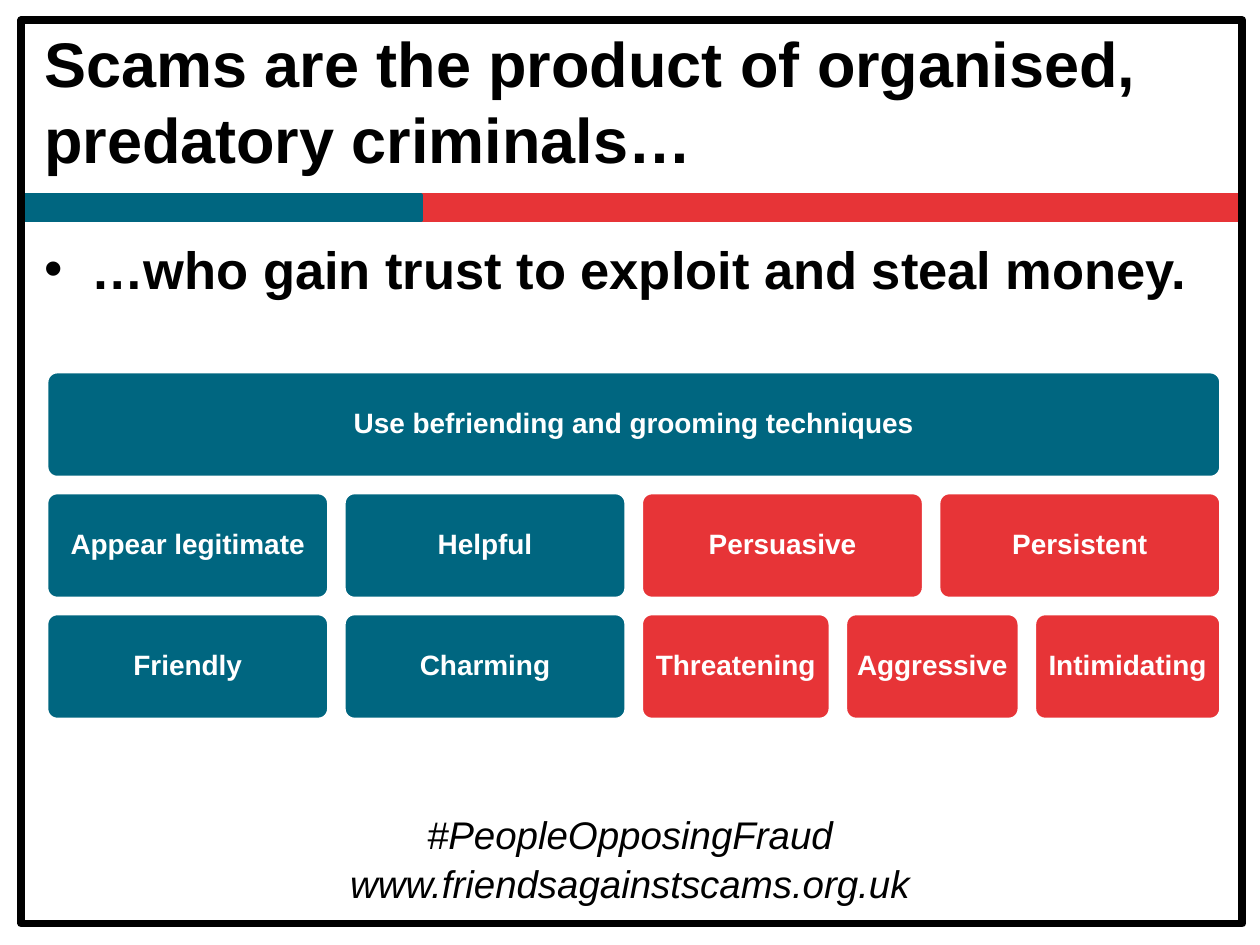
from pptx import Presentation
from pptx.dml.color import RGBColor
from pptx.enum.shapes import MSO_SHAPE
from pptx.enum.text import MSO_ANCHOR, PP_ALIGN
from pptx.util import Inches, Pt

RECTANGLE, ROUNDED = MSO_SHAPE.RECTANGLE, MSO_SHAPE.ROUNDED_RECTANGLE
CENTER, LEFT = PP_ALIGN.CENTER, PP_ALIGN.LEFT
TOP, MIDDLE = MSO_ANCHOR.TOP, MSO_ANCHOR.MIDDLE

THEME = {
    "font": "Arial",
    "teal": RGBColor(0x00, 0x66, 0x80),
    "red": RGBColor(0xE7, 0x34, 0x37),
    "black": RGBColor(0, 0, 0),
    "white": RGBColor(255, 255, 255),
    "title": 36, "body": 30, "footer": 22, "tile": 16,
}

# Content
TITLE = "Scams are the product of organised, predatory criminals…"
BODY = "…who gain trust to exploit and steal money."
FOOTER = [("#PeopleOpposingFraud", 6.39), ("www.friendsagainstscams.org.uk", 6.78)]
BANDS = [("red", 0.42, 9.44), ("teal", 0.17, 3.17)]  # colour, left, width
TILE_ROWS = [  # label, colour, width
    [("Use befriending and grooming techniques", "teal", 9.32)],
    [("Appear legitimate", "teal", 2.24), ("Helpful", "teal", 2.24),
     ("Persuasive", "red", 2.24), ("Persistent", "red", 2.24)],
    [("Friendly", "teal", 2.24), ("Charming", "teal", 2.24),
     ("Threatening", "red", 1.5), ("Aggressive", "red", 1.38),
     ("Intimidating", "red", 1.48)],
]
TILE_LEFT, TILE_TOP, TILE_HEIGHT, TILE_GAP = 0.37, 2.95, 0.84, 0.12


def write(box, text, role, color="black", align=LEFT, anchor=TOP, bold=True):
    frame = box.text_frame
    frame.word_wrap = True
    frame.vertical_anchor = anchor
    frame.text = text
    para = frame.paragraphs[0]
    para.alignment = align
    para.space_before = Pt(0)
    para.font.name = THEME["font"]
    para.font.size = Pt(THEME[role])
    para.font.bold = bold
    para.font.italic = not bold
    para.font.color.rgb = THEME[color]
    return para


def place(box, left, top, width, height):
    box.left, box.top = Inches(left), Inches(top)
    box.width, box.height = Inches(width), Inches(height)


def add_block(slide, kind, area, fill, line, line_width):
    block = slide.shapes.add_shape(kind, *map(Inches, area))
    block.shadow.inherit = False
    if fill:
        block.fill.solid()
        block.fill.fore_color.rgb = THEME[fill]
    else:
        block.fill.background()
    block.line.color.rgb = THEME[line]
    block.line.width = Pt(line_width)
    return block


def add_tile(slide, label, color, area):
    tile = add_block(slide, ROUNDED, area, color, "white", 2)
    tile.adjustments[0] = 0.1
    frame = tile.text_frame
    frame.margin_left = frame.margin_right = Inches(0.04)
    para = write(tile, label, "tile", "white", CENTER, MIDDLE)
    para.line_spacing = 0.9


def main():
    deck = Presentation()
    deck.slide_width, deck.slide_height = Inches(10), Inches(7.5)
    slide = deck.slides.add_slide(deck.slide_layouts[1])

    # Coloured bands and page frame
    for color, left, width in BANDS:
        add_block(slide, RECTANGLE, (left, 1.55, width, 0.2), color, color, 2)
    add_block(slide, RECTANGLE, (0.17, 0.16, 9.69, 7.17), None, "black", 4.5)

    # Title and lead sentence
    title, body = slide.shapes.title, slide.placeholders[1]
    place(title, 0.25, 0.17, 9.42, 1.25)
    write(title, TITLE, "title", anchor=MIDDLE)
    place(body, 0.25, 1.83, 9.42, 0.83)
    properties = body.text_frame.paragraphs[0]._p.get_or_add_pPr()
    properties.set("marL", "0")
    properties.set("indent", "0")
    properties.insert_element_before(
        properties.makeelement(
            "{http://schemas.openxmlformats.org/drawingml/2006/main}buNone", {}),
        "a:tabLst", "a:defRPr", "a:extLst")
    write(body, BODY, "body")

    # Tiles flow from the left edge with an equal gap
    for row, tiles in enumerate(TILE_ROWS):
        left = TILE_LEFT
        top = TILE_TOP + row * (TILE_HEIGHT + TILE_GAP)
        for label, color, width in tiles:
            add_tile(slide, label, color, (left, top, width, TILE_HEIGHT))
            left += width + TILE_GAP

    # Footer lines
    for text, top in FOOTER:
        box = slide.shapes.add_textbox(Inches(0), Inches(top), Inches(10), Inches(0.47))
        write(box, text, "footer", align=CENTER, bold=False)

    deck.save("out.pptx")


if __name__ == "__main__":
    main()
